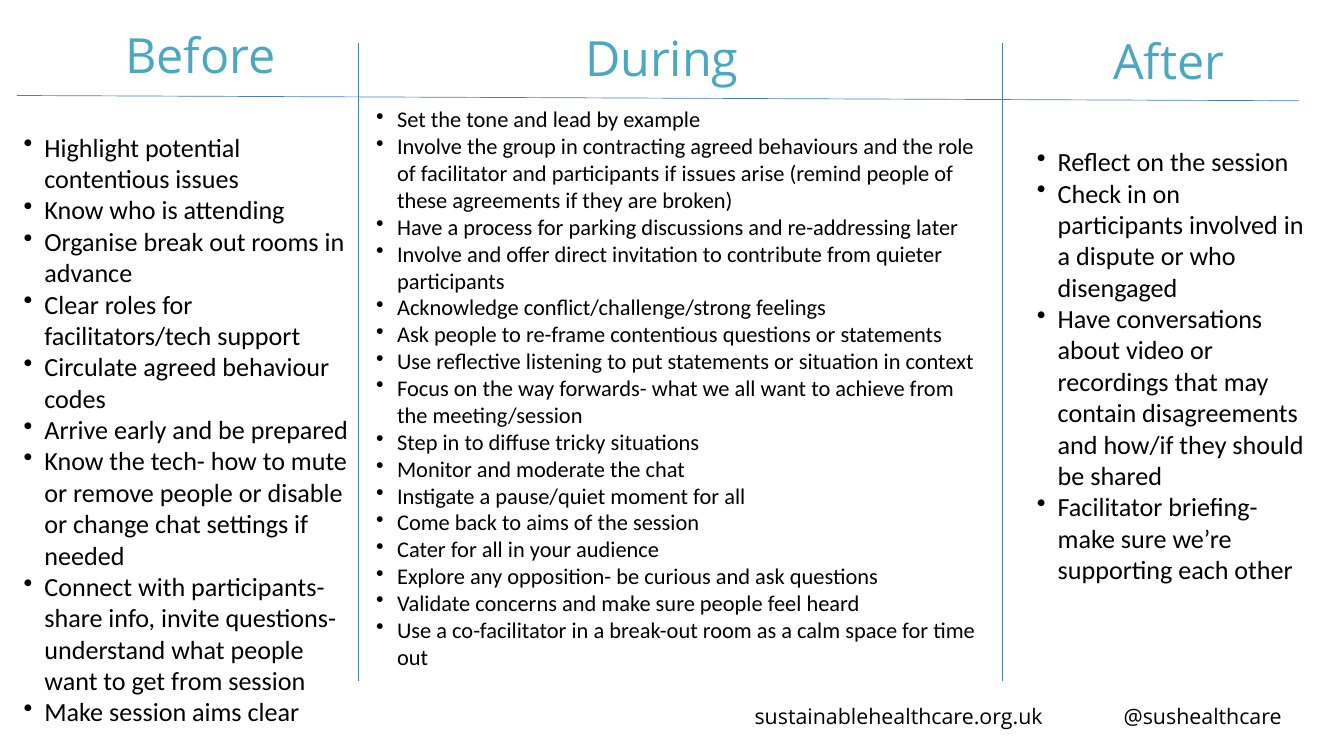
"""Build a slide of facilitator tips for before, during and after a session."""
import dataclasses

import pptx
import pptx.dml.color
import pptx.enum.shapes
import pptx.enum.text
import pptx.oxml.ns
import pptx.util
from lxml import etree

Cm = pptx.util.Cm
Pt = pptx.util.Pt


@dataclasses.dataclass(frozen=True)
class Theme:
    """Colours, fonts and type sizes."""
    head: str = "4CA8C1"
    text: str = "000000"
    rule: str = "4B7EBC"
    sans: str = "Open Sans"
    body: str = "Calibri"
    title: float = 52
    large: float = 28
    small: float = 24
    foot: float = 22.9
    line: float = 0.75


THEME = Theme()

BEFORE = [
    "Highlight potential contentious issues",
    "Know who is attending",
    "Organise break out rooms in advance",
    "Clear roles for facilitators/tech support",
    "Circulate agreed behaviour codes",
    "Arrive early and be prepared",
    "Know the tech- how to mute or remove people or disable or change chat "
    "settings if needed",
    "Connect with participants- share info, invite questions- understand "
    "what people want to get from session",
    "Make session aims clear",
]
DURING = [
    "Set the tone and lead by example",
    "Involve the group in contracting agreed behaviours and the role of "
    "facilitator and participants if issues arise (remind people of these "
    "agreements if they are broken)",
    "Have a process for parking discussions and re-addressing later",
    "Involve and offer direct invitation to contribute from quieter participants",
    "Acknowledge conflict/challenge/strong feelings",
    "Ask people to re-frame contentious questions or statements",
    "Use reflective listening to put statements or situation in context",
    "Focus on the way forwards- what we all want to achieve from the "
    "meeting/session",
    "Step in to diffuse tricky situations",
    "Monitor and moderate the chat",
    "Instigate a pause/quiet moment for all",
    "Come back to aims of the session",
    "Cater for all in your audience",
    "Explore any opposition- be curious and ask questions",
    "Validate concerns and make sure people feel heard",
    "Use a co-facilitator in a break-out room as a calm space for time out",
]
AFTER = [
    "Reflect on the session",
    "Check in on participants involved in a dispute or who disengaged",
    "Have conversations about video or recordings that may contain "
    "disagreements and how/if they should be shared",
    "Facilitator briefing- make sure we’re supporting each other",
]


def add(node, tag, **attrs):
    """Append a drawing element and return it."""
    return etree.SubElement(node, pptx.oxml.ns.qn(tag), **attrs)


def style(para, face, size, tint):
    """Set the font of a paragraph."""
    font = para.font
    font.name, font.size = face, Pt(size)
    font.color.rgb = pptx.dml.color.RGBColor.from_string(tint)


def frame(slide, box, inset=True):
    """Add a wrapped text box and return its frame."""
    text = slide.shapes.add_textbox(*map(Cm, box)).text_frame
    text.word_wrap = True
    if not inset:
        text.margin_left = text.margin_right = 0
        text.margin_top = text.margin_bottom = 0
    return text


def header(slide, box, words):
    """Place a centred column heading."""
    para = frame(slide, box, inset=False).paragraphs[0]
    para.text = words
    para.alignment = pptx.enum.text.PP_ALIGN.CENTER
    para.line_spacing = Pt(58.8)
    style(para, THEME.sans, THEME.title, THEME.head)


def points(slide, box, items, size):
    """Place a bulleted list."""
    text = frame(slide, box)
    for num, item in enumerate(items):
        para = text.add_paragraph() if num else text.paragraphs[0]
        para.text = item
        props = para._p.get_or_add_pPr()
        props.set("marL", str(Cm(0.79)))
        props.set("indent", str(-Cm(0.79)))
        add(props, "a:buChar", char="•")
        style(para, THEME.body, size, THEME.text)


def rules(slide, box, splits, drop, tilt):
    """Draw the column dividers and the rule under the headings."""
    left, top, width, height = box
    lines = [(left + x, top, left + x, top + height) for x in splits]
    lines.append((left, top + drop, left + width, top + drop + tilt))
    for ends in lines:
        line = slide.shapes.add_connector(
            pptx.enum.shapes.MSO_CONNECTOR.STRAIGHT, *map(Cm, ends))
        line.line.color.rgb = pptx.dml.color.RGBColor.from_string(THEME.rule)
        line.line.width = Pt(THEME.line)
        add(line._element.spPr, "a:effectLst")


def footer(slide, box, site, user, stop):
    """Place the web address and the handle on one tabbed line."""
    para = frame(slide, box, inset=False).paragraphs[0]
    para.text = f"{site}\t{user}"
    tabs = add(para._p.get_or_add_pPr(), "a:tabLst")
    add(tabs, "a:tab", pos=str(Cm(stop)), algn="l")
    para.line_spacing = Pt(36.6)
    style(para, THEME.sans, THEME.foot, THEME.text)


def main():
    """Build and save the slide."""
    deck = pptx.Presentation()
    deck.slide_width, deck.slide_height = Cm(50.8), Cm(28.58)
    slide = deck.slides.add_slide(deck.slide_layouts[6])
    rules(slide, (0.64, 1.63, 48.46, 24.13), (12.9, 37.26), 1.98, 0.2)
    columns = [
        ("Before", 0.64, 1.07, (0.64, 4.83, 12.9, 22.99), BEFORE, THEME.large),
        ("During", 18.08, 1.17, (13.97, 3.86, 23.29, 23.34), DURING, THEME.small),
        ("After", 37.24, 1.3, (38.94, 5.38, 10.8, 17.02), AFTER, THEME.large),
    ]
    for words, left, top, box, items, size in columns:
        header(slide, (left, top, 13.87, 2.11), words)
        points(slide, box, items, size)
    footer(slide, (28.52, 26.26, 21.5, 1.19),
           "sustainablehealthcare.org.uk", "@sushealthcare", 13.95)
    deck.save("out.pptx")


if __name__ == "__main__":
    main()
